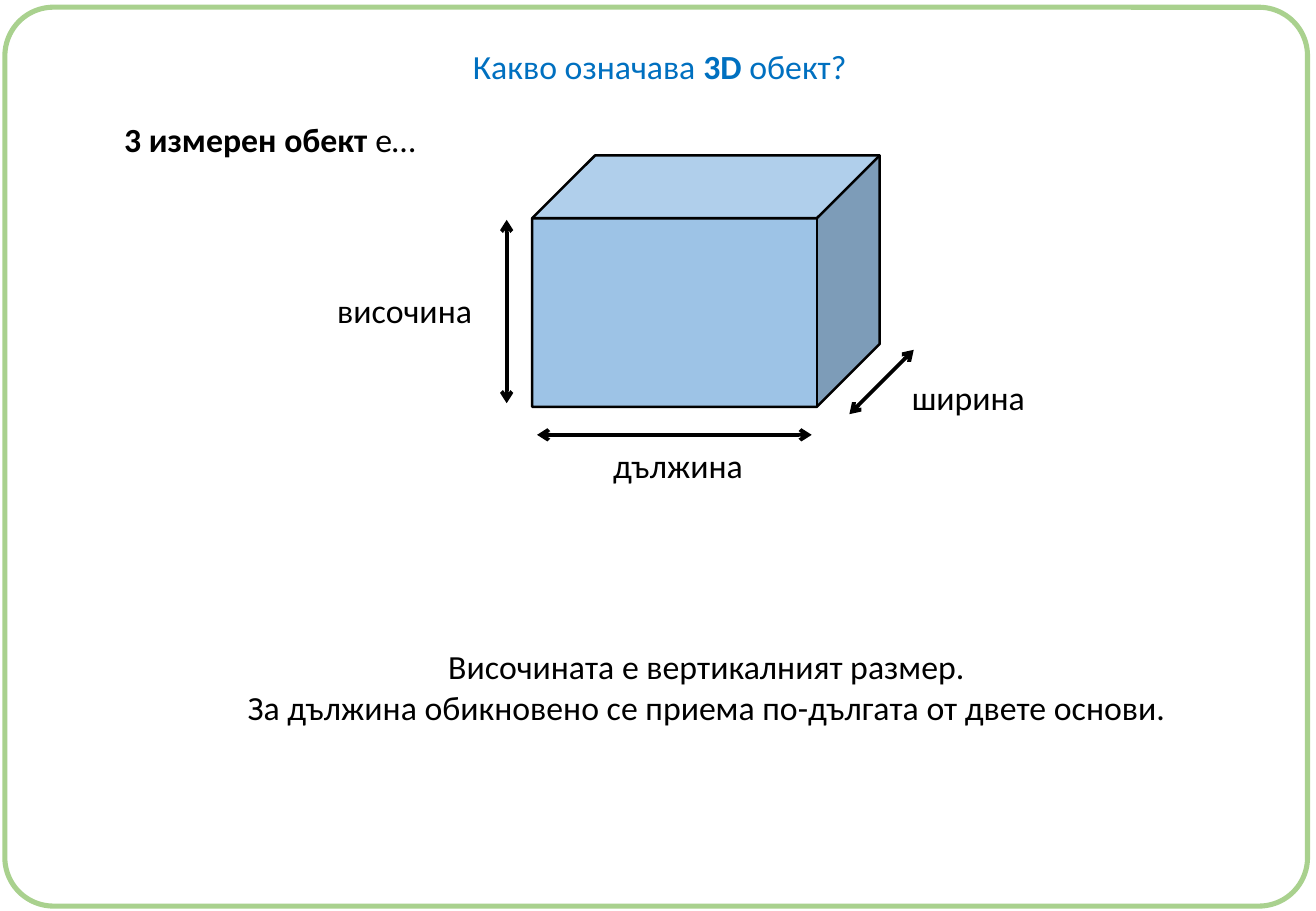
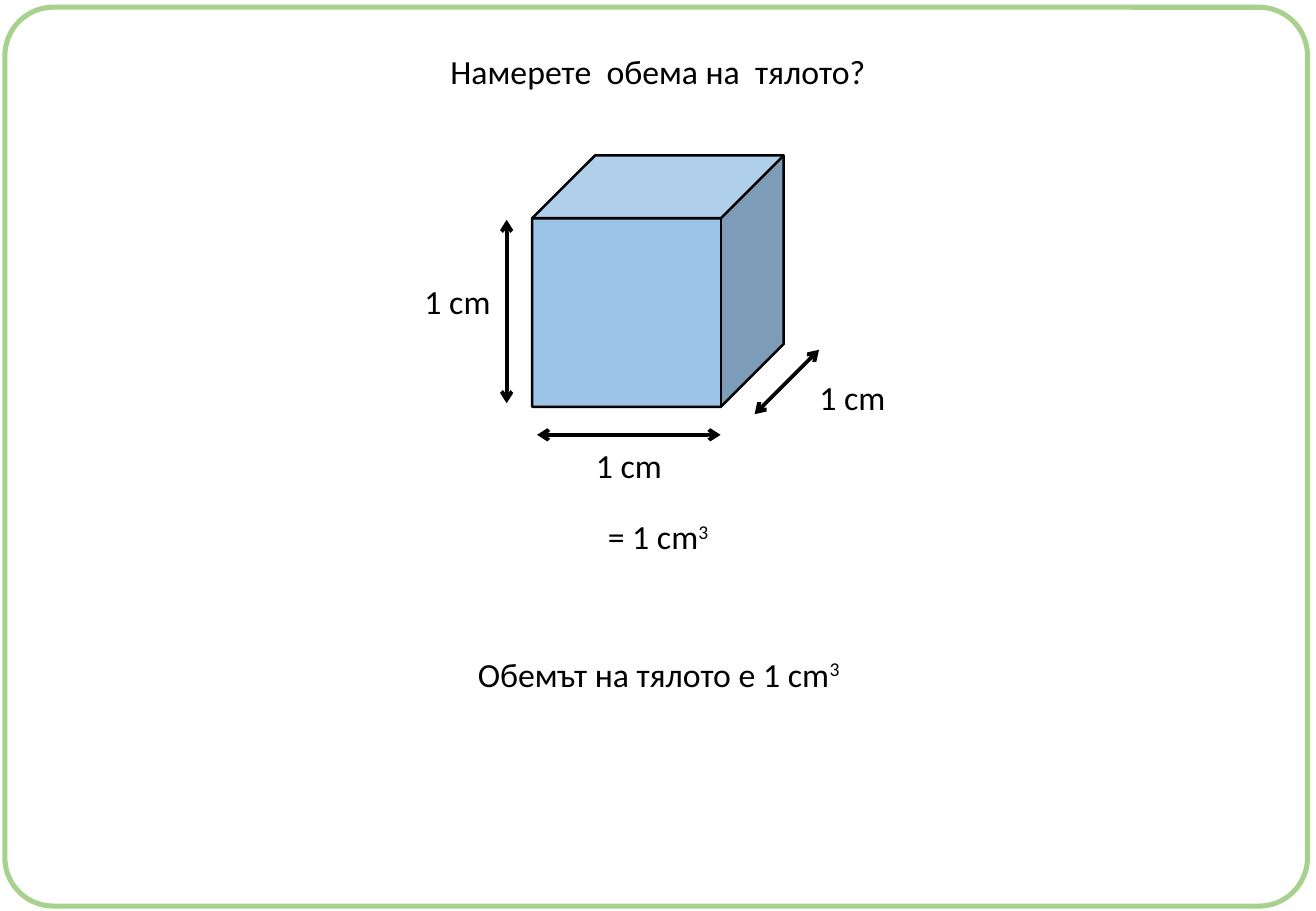
from pptx import Presentation
from pptx.dml.color import RGBColor
from pptx.enum.shapes import MSO_CONNECTOR, MSO_SHAPE
from pptx.enum.text import MSO_AUTO_SIZE, PP_ALIGN
from pptx.oxml.ns import qn
from pptx.util import Pt
from lxml.etree import SubElement

PX = 9144  # 100 px to the inch
HUES = {"ink": "000000", "title": "0070C0", "cube": "9DC3E6", "frame": "A9D18E"}


def hue(name):
    return RGBColor.from_string(HUES[name])


def write(slide, box, lines, tint="ink"):
    """Centred text; each line is a list of (words, mark), mark "b", "sup" or ""."""
    area = slide.shapes.add_textbox(*[n * PX for n in box])
    frame = area.text_frame
    frame.word_wrap = False
    frame.auto_size = MSO_AUTO_SIZE.SHAPE_TO_FIT_TEXT
    frame.text = "\n".join("" for line in lines)
    for para, line in zip(frame.paragraphs, lines):
        para.alignment = PP_ALIGN.CENTER
        for words, mark in line:
            run = para.add_run()
            run.text = words
            font = run.font
            font.name, font.size, font.bold = "Calibri", Pt(20), mark == "b"
            font.color.rgb = hue(tint)
            if mark == "sup":
                run._r.get_or_add_rPr().set("baseline", "30000")


# cube width, right end of the length arrow, left end of the depth arrow, texts
pages = [
    (286, 668, 699, [
        ((494, 361, 128, 44), [[("дължина", "")]], "ink"),
        ((740, 305, 114, 44), [[("ширина", "")]], "ink"),
        ((267, 234, 132, 44), [[("височина", "")]], "ink"),
        ((378, 33, 330, 44),
         [[("Какво означава ", ""), ("3D ", "b"), ("обект?", "")]], "title"),
        ((91, 93, 262, 44), [[("3 измерен обект ", "b"), ("е…", "")]], "ink"),
        ((191, 527, 781, 77),
         [[("Височината е вертикалният размер.", "")],
          [("За дължина обикновено се приема по-дългата от двете основи.", "")]],
         "ink"),
    ]),
    (207, 593, 621, [
        ((480, 361, 75, 44), [[("1 cm", "")]], "ink"),
        ((664, 305, 75, 44), [[("1 cm", "")]], "ink"),
        ((339, 226, 75, 44), [[("1 cm", "")]], "ink"),
        ((359, 37, 365, 44), [[("Намерете  обема на  тялото?", "")]], "ink"),
        ((489, 420, 105, 44), [[("= 1 cm", ""), ("3", "sup")]], "ink"),
        ((381, 533, 322, 44),
         [[("Обемът на тялото е 1 cm", ""), ("3", "sup")]], "ink"),
    ]),
]

deck = Presentation()
deck.slide_width, deck.slide_height = 1083 * PX, 750 * PX

for width, end, start, texts in pages:
    slide = deck.slides.add_slide(deck.slide_layouts[6])

    solids = [
        (MSO_SHAPE.ROUNDED_RECTANGLE, (4, 6, 1072, 740), 0.054, None, "frame", 3),
        (MSO_SHAPE.CUBE, (438, 128, width, 207), 0.25, "cube", "ink", 1.5),
    ]
    for kind, box, bend, fill, edge, weight in solids:
        shape = slide.shapes.add_shape(kind, *[n * PX for n in box])
        shape.adjustments[0] = bend
        shape.shadow.inherit = False
        if fill:
            shape.fill.solid()
            shape.fill.fore_color.rgb = hue(fill)
        else:
            shape.fill.background()
        shape.line.color.rgb = hue(edge)
        shape.line.width = Pt(weight)

    arrows = [
        (442, 358, end, 358),
        (417, 332, 417, 181),
        (start, 341, start + 53, 288),
    ]
    for ends in arrows:
        arrow = slide.shapes.add_connector(
            MSO_CONNECTOR.STRAIGHT, *[n * PX for n in ends])
        arrow.line.color.rgb = hue("ink")
        arrow.line.width = Pt(2.25)
        line = arrow.line._get_or_add_ln()
        for tip in ("a:headEnd", "a:tailEnd"):
            SubElement(line, qn(tip)).set("type", "arrow")
        SubElement(arrow._element.spPr, qn("a:effectLst"))

    for box, lines, tint in texts:
        write(slide, box, lines, tint)

deck.save("out.pptx")
